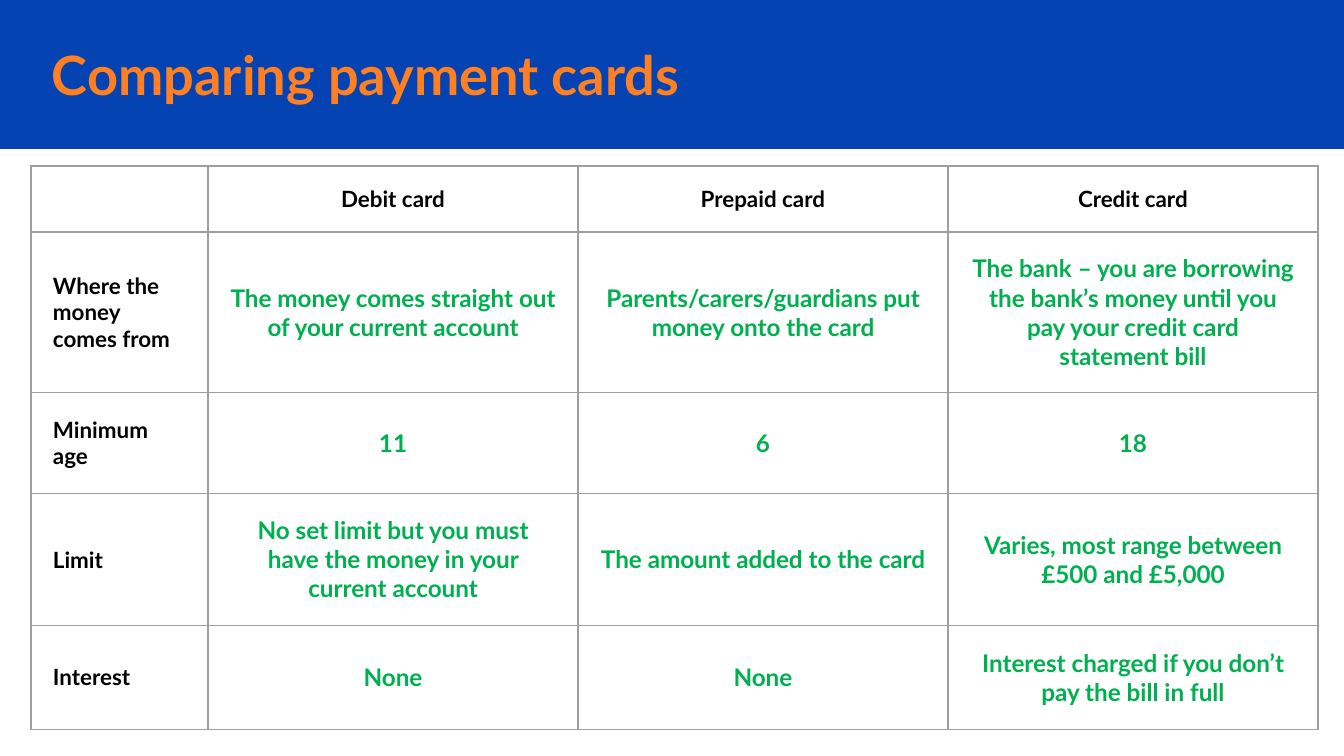
from lxml.etree import SubElement
from pptx import Presentation
from pptx.dml.color import RGBColor
from pptx.enum.shapes import MSO_SHAPE
from pptx.enum.text import MSO_ANCHOR, PP_ALIGN
from pptx.oxml.ns import qn
from pptx.util import Emu, Pt

PX = 914400 / 134.4
THEME = {
    "font": "Lato",
    "band": "0543B3", "title": "FF8022", "label": "000000",
    "answer": "00B050", "cell": "FFFFFF", "border": "9E9E9E",
    "title_size": 29, "label_size": 12, "answer_size": 13, "border_width": 0.75,
}


def px(count):
    return Emu(round(count * PX))


def write(frame, text, *, color, size, align=PP_ALIGN.LEFT):
    paragraph = frame.paragraphs[0]
    paragraph.alignment = align
    run = paragraph.add_run()
    run.text = text
    run.font.name = THEME["font"]
    run.font.size = Pt(THEME[size])
    run.font.bold = True
    run.font.color.rgb = RGBColor.from_string(THEME[color])


deck = Presentation()
deck.slide_width, deck.slide_height = px(1344), px(756)
slide = deck.slides.add_slide(deck.slide_layouts[6])

band = slide.shapes.add_shape(MSO_SHAPE.RECTANGLE, px(0), px(0), px(1344), px(149))
band.shadow.inherit = False
band.fill.solid()
band.fill.fore_color.rgb = RGBColor.from_string(THEME["band"])
band.line.fill.background()

# Comparison table
comparison = [
    ["", "Debit card", "Prepaid card", "Credit card"],
    ["Where the money comes from",
     "The money comes straight out of your current account",
     "Parents/carers/guardians put money onto the card",
     "The bank – you are borrowing the bank’s money until you pay your credit card statement bill"],
    ["Minimum age", "11", "6", "18"],
    ["Limit",
     "No set limit but you must have the money in your current account",
     "The amount added to the card",
     "Varies, most range between £500 and £5,000"],
    ["Interest", "None", "None", "Interest charged if you don’t pay the bill in full"],
]
column_widths = [177, 370, 370, 370]
row_heights = [66, 138, 101, 132, 104]
table = slide.shapes.add_table(
    len(row_heights), len(column_widths), px(31), px(166),
    px(sum(column_widths)), px(sum(row_heights))).table
table.first_row = table.horz_banding = False
for column, width in zip(table.columns, column_widths):
    column.width = px(width)
for row, height in zip(table.rows, row_heights):
    row.height = px(height)

for r, entries in enumerate(comparison):
    for c, entry in enumerate(entries):
        cell = table.cell(r, c)
        cell.vertical_anchor = MSO_ANCHOR.MIDDLE
        inset_x, inset_y = (22, 22) if r else (13, 7)
        cell.margin_left = cell.margin_right = px(inset_x)
        cell.margin_top = cell.margin_bottom = px(inset_y)
        properties = cell._tc.get_or_add_tcPr()
        for side in ("a:lnL", "a:lnR", "a:lnT", "a:lnB"):
            border = SubElement(properties, qn(side), w=str(Pt(THEME["border_width"])))
            border_fill = SubElement(border, qn("a:solidFill"))
            SubElement(border_fill, qn("a:srgbClr"), val=THEME["border"])
        cell.fill.solid()
        cell.fill.fore_color.rgb = RGBColor.from_string(THEME["cell"])
        if entry:
            role = "answer" if r and c else "label"
            write(cell.text_frame, entry, color=role, size=f"{role}_size",
                  align=PP_ALIGN.CENTER if c else PP_ALIGN.LEFT)

title = slide.shapes.add_textbox(px(39), px(36), px(1137), px(75)).text_frame
title.word_wrap = True
title.vertical_anchor = MSO_ANCHOR.MIDDLE
title.margin_left = title.margin_right = px(13)
title.margin_top = title.margin_bottom = px(13)
write(title, "Comparing payment cards", color="title", size="title_size")

deck.save("out.pptx")
